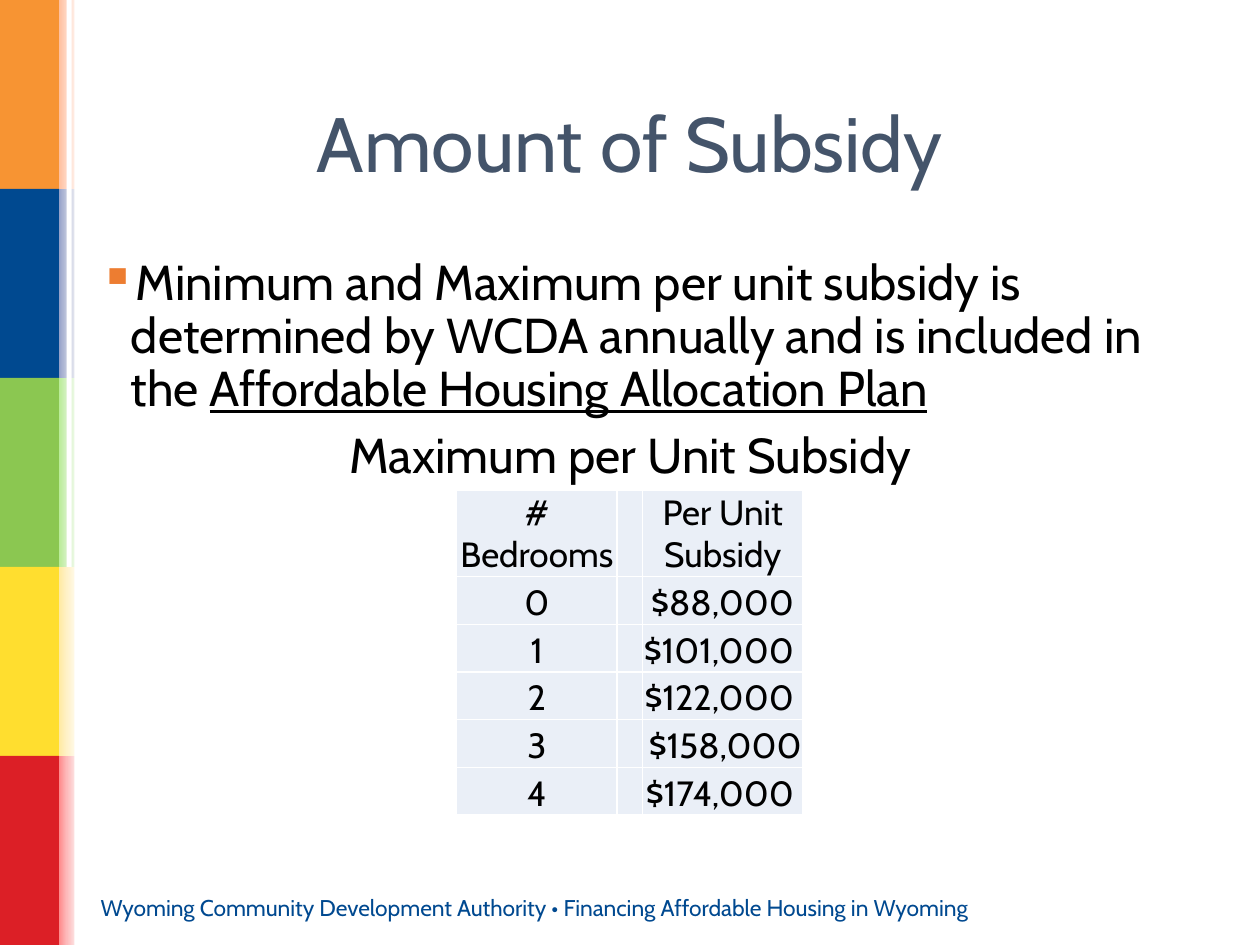
from lxml.etree import SubElement
from pptx import Presentation
from pptx.dml.color import RGBColor
from pptx.enum.shapes import MSO_SHAPE
from pptx.enum.text import MSO_ANCHOR, PP_ALIGN
from pptx.oxml.ns import qn
from pptx.util import Pt

COLORS = {
    "white": "FFFFFF", "black": "000000", "title": "44546A",
    "footer": "004990", "bullet": "ED7D31", "cell": "EAEFF7",
}
BANDS = [
    ("F79433", ["FFC09E", "FFD7C4", "FFEBE2"]),
    ("004990", ["96A2C9", "C0C6DC", "E1E3ED"]),
    ("8BC751", ["BAEC99", "D3F1C1", "E9F8E1"]),
    ("FFDE2F", ["FFEAA2", "FFF1C7", "FFF8E4"]),
    ("DC1F26", ["FE8B8C", "FDB9BA", "FDDDDD"]),
]
SUBSIDIES = ["$88,000 ", "$101,000 ", "$122,000 ", "$158,000 ", "$174,000 "]
FONT = "Cabin"


def add_solid(parent, color):
    fill = SubElement(parent, qn("a:solidFill"))
    SubElement(fill, qn("a:srgbClr"), val=color)


def write(para, text, size=28, color="black", align=None, underline=None):
    para.alignment = align
    span = para.add_run()
    span.text = text
    font = span.font
    font.name, font.size, font.underline = FONT, Pt(size), underline
    font.color.rgb = RGBColor.from_string(COLORS[color])


def add_text_box(page, left, top, width, height, anchor=MSO_ANCHOR.TOP):
    box = page.shapes.add_textbox(Pt(left), Pt(top), Pt(width), Pt(height))
    box.text_frame.word_wrap = True
    box.text_frame.vertical_anchor = anchor
    return box.text_frame


def add_block(page, left, top, width, height, shades):
    block = page.shapes.add_shape(
        MSO_SHAPE.RECTANGLE, Pt(left), Pt(top), Pt(width), Pt(height))
    block.shadow.inherit = False
    block.line.fill.background()
    if len(shades) == 1:
        block.fill.solid()
        block.fill.fore_color.rgb = RGBColor.from_string(shades[0])
        return
    block.fill.gradient()
    block.fill.gradient_angle = 0
    stops = block._element.spPr.find(".//" + qn("a:gsLst"))
    for stop in list(stops):
        stops.remove(stop)
    for index, shade in enumerate(shades):
        position = index * 100000 // (len(shades) - 1)
        stop = SubElement(stops, qn("a:gs"), pos=str(position))
        SubElement(stop, qn("a:srgbClr"), val=shade)


def add_side_bands(page, left, top, width, height):
    solid_width = 33.84
    band_height = height / len(BANDS)
    for index, (solid, shades) in enumerate(BANDS):
        if index == 3:
            add_block(page, left + 38.16, top, 2.88, height, [COLORS["white"]])
        band_top = top + index * band_height
        add_block(page, left, band_top, solid_width, band_height, [solid])
        add_block(page, left + solid_width, band_top,
                  width - solid_width, band_height, shades)


def add_title(page, left, top, width, height):
    frame = add_text_box(page, left, top, width, height, MSO_ANCHOR.MIDDLE)
    write(frame.paragraphs[0], "Amount of Subsidy", size=44, color="title",
          align=PP_ALIGN.CENTER)


def add_body(page, left, top, width, height):
    frame = add_text_box(page, left, top, width, height)
    point = frame.paragraphs[0]
    point.line_spacing = 0.9
    properties = point._p.get_or_add_pPr()
    properties.set("marL", str(Pt(18)))
    properties.set("indent", str(Pt(-18)))
    bullet_color = SubElement(properties, qn("a:buClr"))
    SubElement(bullet_color, qn("a:srgbClr"), val=COLORS["bullet"])
    SubElement(properties, qn("a:buChar"), char="▪")
    write(point, "Minimum and Maximum per unit subsidy is determined by WCDA "
                 "annually and is included in the ")
    write(point, "Affordable Housing Allocation Plan", underline=True)
    caption = frame.add_paragraph()
    caption.line_spacing = 0.9
    caption.space_before = Pt(8.4)
    write(caption, "Maximum per Unit Subsidy", align=PP_ALIGN.CENTER)


def format_cell(cell, text, align):
    cell.margin_left = cell.margin_right = cell.margin_top = Pt(0.72)
    cell.margin_bottom = Pt(0)
    cell.vertical_anchor = MSO_ANCHOR.BOTTOM
    para = cell.text_frame.paragraphs[0]
    if text:
        write(para, text, size=20, align=align)
    else:
        para.font.size = Pt(20)
    properties = cell._tc.get_or_add_tcPr()
    for side in ("lnL", "lnR", "lnT", "lnB"):
        add_solid(SubElement(properties, qn("a:" + side), w=str(Pt(1))),
                  COLORS["white"])
    cell.fill.solid()
    cell.fill.fore_color.rgb = RGBColor.from_string(COLORS["cell"])


def add_subsidy_table(page, left, top, width, height):
    rows = [("# Bedrooms", "", "Per Unit Subsidy")]
    rows += [(str(count), "", amount) for count, amount in enumerate(SUBSIDIES)]
    table = page.shapes.add_table(
        len(rows), 3, Pt(left), Pt(top), Pt(width), Pt(height)).table
    table.first_row = table.horz_banding = False
    gap_width, header_height = 14.4, 49.4
    side_width = (width - gap_width) / 2
    for column, size in zip(table.columns, (side_width, gap_width, side_width)):
        column.width = Pt(size)
    for index, texts in enumerate(rows):
        row_height = (height - header_height) / len(SUBSIDIES)
        table.rows[index].height = Pt(row_height if index else header_height)
        for column, text in enumerate(texts):
            is_amount = index > 0 and column == 2
            format_cell(table.cell(index, column), text,
                        PP_ALIGN.RIGHT if is_amount else PP_ALIGN.CENTER)


def add_footer(page, left, top, width, height):
    frame = add_text_box(page, left, top, width, height)
    write(frame.paragraphs[0],
          "Wyoming Community Development Authority • "
          "Financing Affordable Housing in Wyoming", size=13, color="footer")


def main():
    deck = Presentation()
    deck.slide_width, deck.slide_height = Pt(720), Pt(540)
    page = deck.slides.add_slide(deck.slide_layouts[6])
    add_side_bands(page, 0, 0, 42.48, 540)
    add_footer(page, 50.4, 506.9, 528.5, 23)
    add_body(page, 49.7, 144, 620.6, 342.7)
    add_title(page, 49.7, 28.8, 620.6, 104.4)
    add_subsidy_table(page, 260.9, 280.1, 198, 185.8)
    deck.save("out.pptx")


if __name__ == "__main__":
    main()
